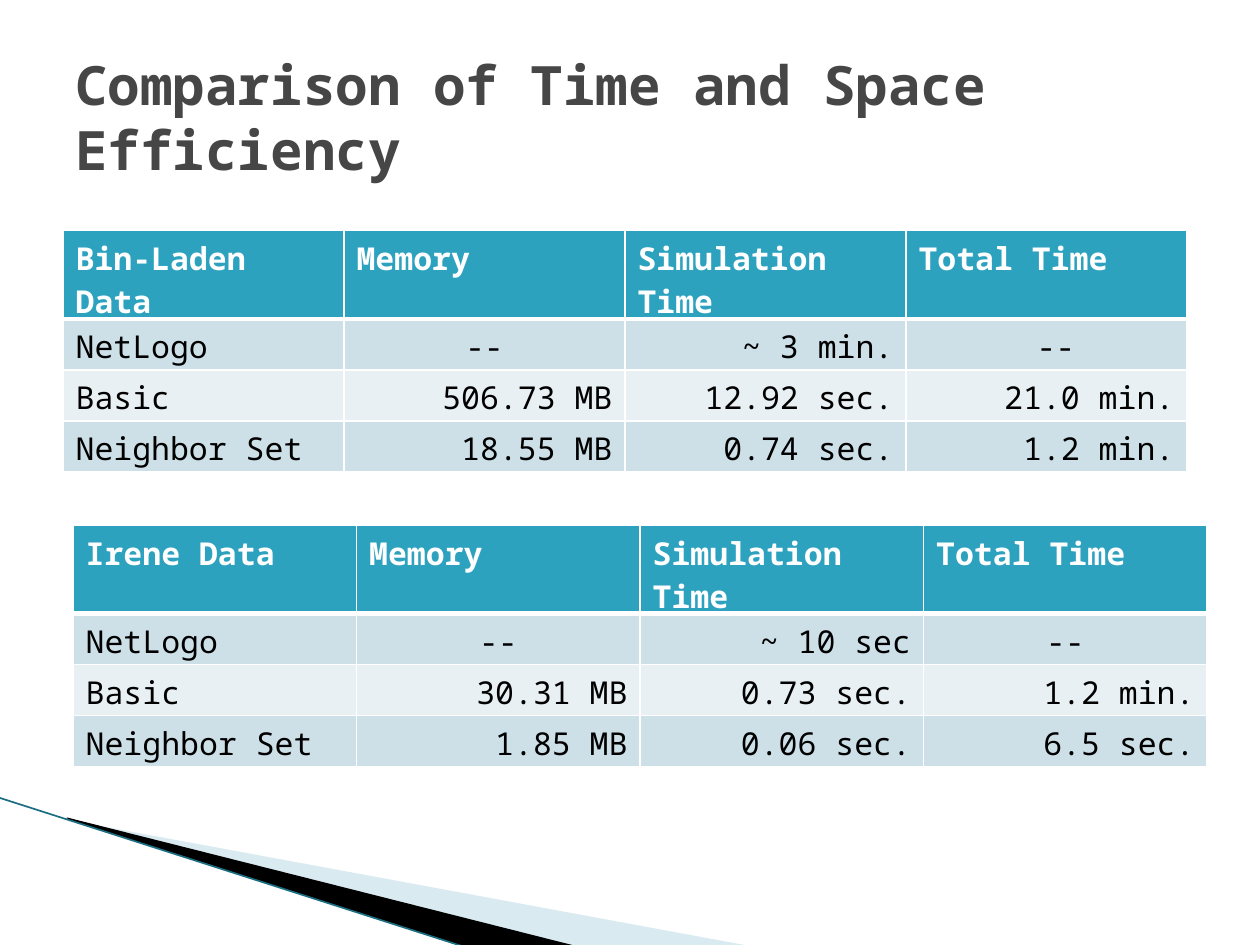
"""Build the slide that compares time and space efficiency in two tables."""
from lxml.etree import SubElement
from pptx import Presentation
from pptx.dml.color import RGBColor
from pptx.enum.shapes import MSO_CONNECTOR
from pptx.enum.text import MSO_ANCHOR, PP_ALIGN
from pptx.oxml import parse_xml
from pptx.oxml.ns import nsdecls, qn
from pptx.util import Inches, Pt

WHITE = RGBColor(0xFF, 0xFF, 0xFF)
BLACK = RGBColor(0, 0, 0)
GRAY = RGBColor(0x46, 0x46, 0x46)
TEAL = RGBColor(0x2D, 0xA2, 0xBF)
DEEP = RGBColor(0x1B, 0x6E, 0x82)
PALE = RGBColor(0xA0, 0xCB, 0xDC)
BANDS = [RGBColor(0xE8, 0xF0, 0xF4), RGBColor(0xCD, 0xE0, 0xE8)]
FONT = "Noto Sans Mono"

deck = Presentation()
deck.slide_width, deck.slide_height = Inches(10), Inches(7.5)
slide = deck.slides.add_slide(deck.slide_layouts[6])
shapes = slide.shapes


def share(*parts):
    """Turn percents of width and height, in turn, into lengths."""
    sides = deck.slide_width, deck.slide_height
    return [round(part * sides[i % 2] / 100) for i, part in enumerate(parts)]


def style(para, text, **form):
    """Write one run and set its font from format values."""
    run = para.add_run()
    run.text = text
    color = form.pop("color")
    for name, value in form.items():
        setattr(run.font, name, value)
    run.font.color.rgb = color


wedges = [
    (PALE, [(5.5, 86.8), (59.5, 100.1), (45.6, 100.1), (5.5, 86.7)]),
    (BLACK, [(5.3, 86.5), (45.7, 100.1), (37.2, 100.3), (5.4, 86.7)]),
]
for color, points in wedges:
    start, *rest = [share(*point) for point in points]
    pen = shapes.build_freeform(*start)
    pen.add_line_segments(rest, close=True)
    wedge = pen.convert_to_shape()
    wedge.shadow.inherit = False
    wedge.fill.solid()
    wedge.fill.fore_color.rgb = color
    wedge.line.fill.background()
    if color == PALE:
        tint = wedge.fill._xPr.find(".//" + qn("a:srgbClr"))
        SubElement(tint, qn("a:alpha"), val="40000")

edge = shapes.add_connector(MSO_CONNECTOR.STRAIGHT, *share(-0.1, 84.4, 37.1, 100.3))
edge.line.width = Pt(0.95)
edge.line.color.rgb = DEEP
SubElement(edge._element.spPr, qn("a:effectLst"))

title = shapes.add_textbox(*share(5, 4, 90, 16.67)).text_frame
title.word_wrap = True
title.vertical_anchor = MSO_ANCHOR.MIDDLE
style(title.paragraphs[0], "Comparison of Time and Space Efficiency",
      size=Pt(31), name=FONT, bold=True, color=GRAY)

HEADS = ["Memory", "Simulation Time", "Total Time"]
tables = [
    ((5, 24.4, 89.2, 21.6), [
        ["Bin-Laden Data", *HEADS],
        ["NetLogo", "--", "~ 3 min.", " --"],
        ["Basic", "506.73 MB", "12.92 sec.", "21.0 min."],
        ["Neighbor Set", "18.55 MB", "0.74 sec.", "1.2 min."],
    ]),
    ((5.8, 55.6, 90, 21.6), [
        ["Irene Data", *HEADS],
        ["NetLogo", "--", "~ 10 sec", "--"],
        ["Basic", "30.31 MB", "0.73 sec.", "1.2 min."],
        ["Neighbor Set", "1.85 MB", "0.06 sec.", "6.5 sec."],
    ]),
]
for place, rows in tables:
    grid = shapes.add_table(len(rows), len(rows[0]), *share(*place)).table
    for r, row in enumerate(rows):
        for c, text in enumerate(row):
            head = r == 0
            cell = grid.cell(r, c)
            para = cell.text_frame.paragraphs[0]
            if head or c == 0:
                para.alignment = PP_ALIGN.LEFT
            elif text.strip() == "--":
                para.alignment = PP_ALIGN.CENTER
            else:
                para.alignment = PP_ALIGN.RIGHT
            style(para, text, size=Pt(18), name=FONT, bold=head,
                  color=WHITE if head else BLACK)
            props = cell._tc.get_or_add_tcPr()
            widths = {"L": 1, "R": 1, "T": 3 if r == 1 else 1, "B": 3 if head else 1}
            for side, width in widths.items():
                props.append(parse_xml(
                    f'<a:ln{side} {nsdecls("a")} w="{Pt(width)}"><a:solidFill>'
                    f'<a:srgbClr val="{WHITE}"/></a:solidFill></a:ln{side}>'))
            cell.fill.solid()
            cell.fill.fore_color.rgb = TEAL if head else BANDS[r % 2]

deck.save("out.pptx")
